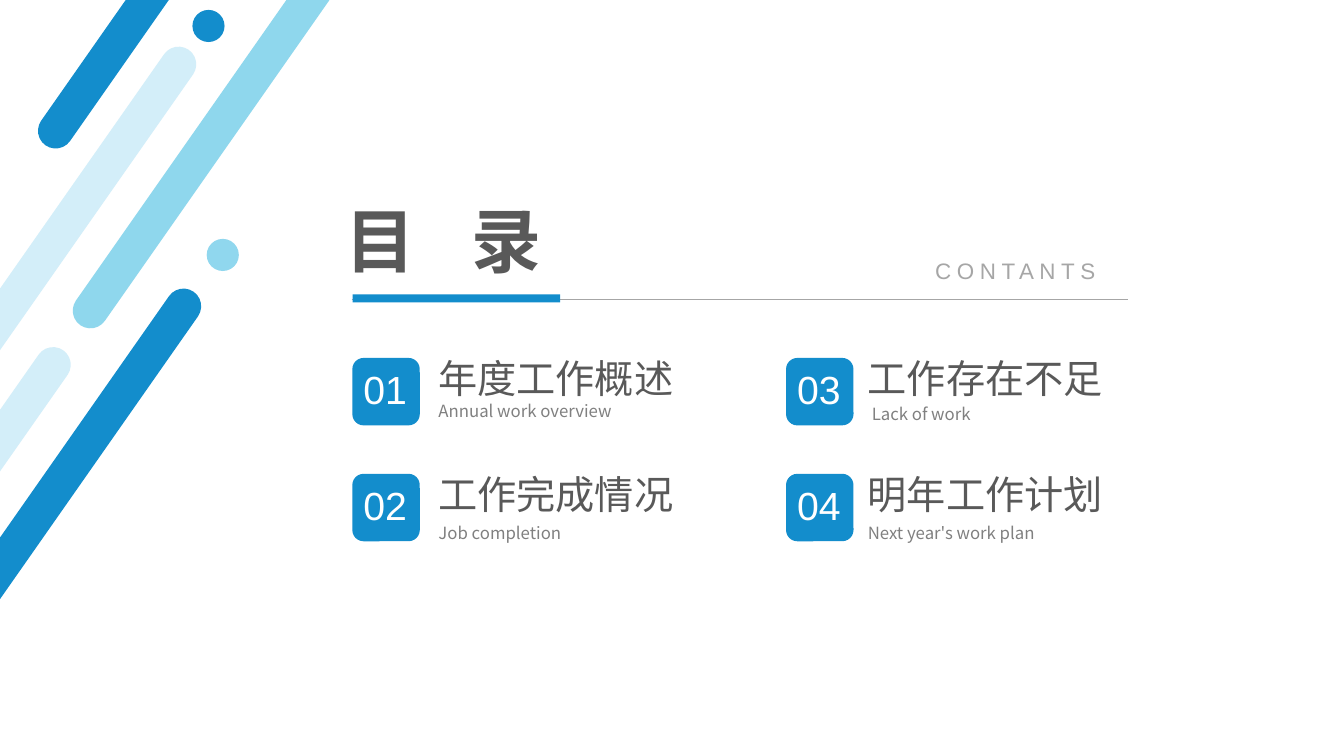
from lxml.etree import SubElement
from pptx import Presentation
from pptx.dml.color import RGBColor as Rgb
from pptx.enum.shapes import MSO_CONNECTOR as Link, MSO_SHAPE as Form
from pptx.enum.text import MSO_ANCHOR as Anchor, MSO_AUTO_SIZE as Fit, PP_ALIGN as Align
from pptx.oxml.ns import qn
from pptx.util import Cm, Pt

# Content: lengths in cm
BLUE, SKY, PALE, AQUA = "138DCC", "8FD7ED", "D3EEF9", "90D7EE"
CJK, LATIN = "Noto Sans CJK SC", "Arial"
TITLE = ["目", " ", "录"]
# Slanted bars: left, top, length, colour
BARS = [
    (-0.84, 5.69, 18.39, BLUE),
    (-4.14, 7.16, 18.44, PALE),
    (8.23, -12.9, 23.19, SKY),
    (-2.34, -0.84, 23.19, PALE),
    (5.99, -13.11, 18.44, BLUE),
]
DOTS = [(5.21, 6.02, AQUA), (4.85, 0.25, BLUE)]
# Agenda: heading, subtitle, subtitle shift right and down; read column by column
ITEMS = [
    ("年度工作概述", "Annual work overview", 0, 0.96),
    ("工作完成情况", "Job completion", 0, 1.12),
    ("工作存在不足", "Lack of work", 0.1, 1.04),
    ("明年工作计划", "Next year's work plan", 0, 1.12),
]
COLS = [(8.88, 1.92), (19.81, 1.81)]  # badge left, gap to heading
TOP, PITCH, BADGE = 9.02, 2.92, 1.7

# Text formats
HEAD = {"size": Pt(28), "name": CJK, "color": "595959"}
SUB = {"size": Pt(12), "name": CJK, "color": "808080"}
NUM = {"size": Pt(28), "name": LATIN, "color": "FFFFFF"}
TAG = {"size": Pt(16), "name": LATIN, "color": "A6A6A6"}
MAIN = {"size": Pt(50), "name": CJK, "color": "595959", "bold": True}

deck = Presentation()
deck.slide_width, deck.slide_height = Cm(33.87), Cm(19.05)
slide = deck.slides.add_slide(deck.slide_layouts[5])
parts = slide.shapes


def paint(target, hue):
    target.rgb = Rgb.from_string(hue)


def shape(form, left, top, wide, high, hue):
    item = parts.add_shape(form, Cm(left), Cm(top), Cm(wide), Cm(high))
    item.shadow.inherit = False
    item.fill.solid()
    paint(item.fill.fore_color, hue)
    item.line.fill.background()
    return item


def write(para, words, look, space=0):
    run = para.add_run()
    run.text = words
    for key, value in look.items():
        if key == "color":
            paint(run.font.color, value)
        else:
            setattr(run.font, key, value)
    props = run.font._element
    SubElement(props, qn("a:ea"), typeface=look["name"])
    if space:
        props.set("spc", str(int(space * 100)))


def label(words, left, top, wide, high, look, align=Align.LEFT, space=0):
    frame = parts.add_textbox(Cm(left), Cm(top), Cm(wide), Cm(high)).text_frame
    frame.word_wrap = True
    frame.auto_size = Fit.SHAPE_TO_FIT_TEXT
    para = frame.paragraphs[0]
    para.alignment = align
    write(para, words, look, space)


# Corner decoration
for left, top, size, hue in BARS:
    bar = shape(Form.ROUNDED_RECTANGLE, left, top, 0.89, size, hue)
    bar.adjustments[0] = 0.5
    bar.rotation = 35
for left, top, hue in DOTS:
    shape(Form.OVAL, left, top, 0.81, 0.81, hue)

# Agenda grid, two rows per column
for i, (head, sub, right, down) in enumerate(ITEMS):
    left, gap = COLS[i // 2]
    top = TOP + i % 2 * PITCH
    shape(Form.ROUNDED_RECTANGLE, left, top, BADGE, BADGE, BLUE)
    label(f"{i + 1:02}", left + 0.03, top + 0.07, 1.8, 1.45, NUM)
    label(head, left + gap, top - 0.21, 8.28, 1.45, HEAD)
    label(sub, left + gap + right, top + down, 8.56, 0.76, SUB)

# Rule with accent
rule = parts.add_connector(Link.STRAIGHT, Cm(8.86), Cm(7.54), Cm(28.42), Cm(7.54))
rule.line.width = Pt(0.5)
paint(rule.line.color, "A6A6A6")
SubElement(rule._element.spPr, qn("a:effectLst"))
shape(Form.RECTANGLE, 8.89, 7.42, 5.23, 0.2, BLUE)
label("CONTANTS", 22.43, 6.35, 6.32, 0.94, TAG, Align.CENTER, 4)

# Title, its gap made with letter spacing
title = parts.title
title.left, title.top, title.width, title.height = Cm(8.46), Cm(4.78), Cm(24.41), Cm(2.51)
frame = title.text_frame
frame.auto_size = Fit.NONE
frame.vertical_anchor = Anchor.MIDDLE
para = frame.paragraphs[0]
para.alignment = Align.LEFT
for words in TITLE:
    write(para, words, MAIN, 27 if words == " " else 1.5)

deck.save("out.pptx")
